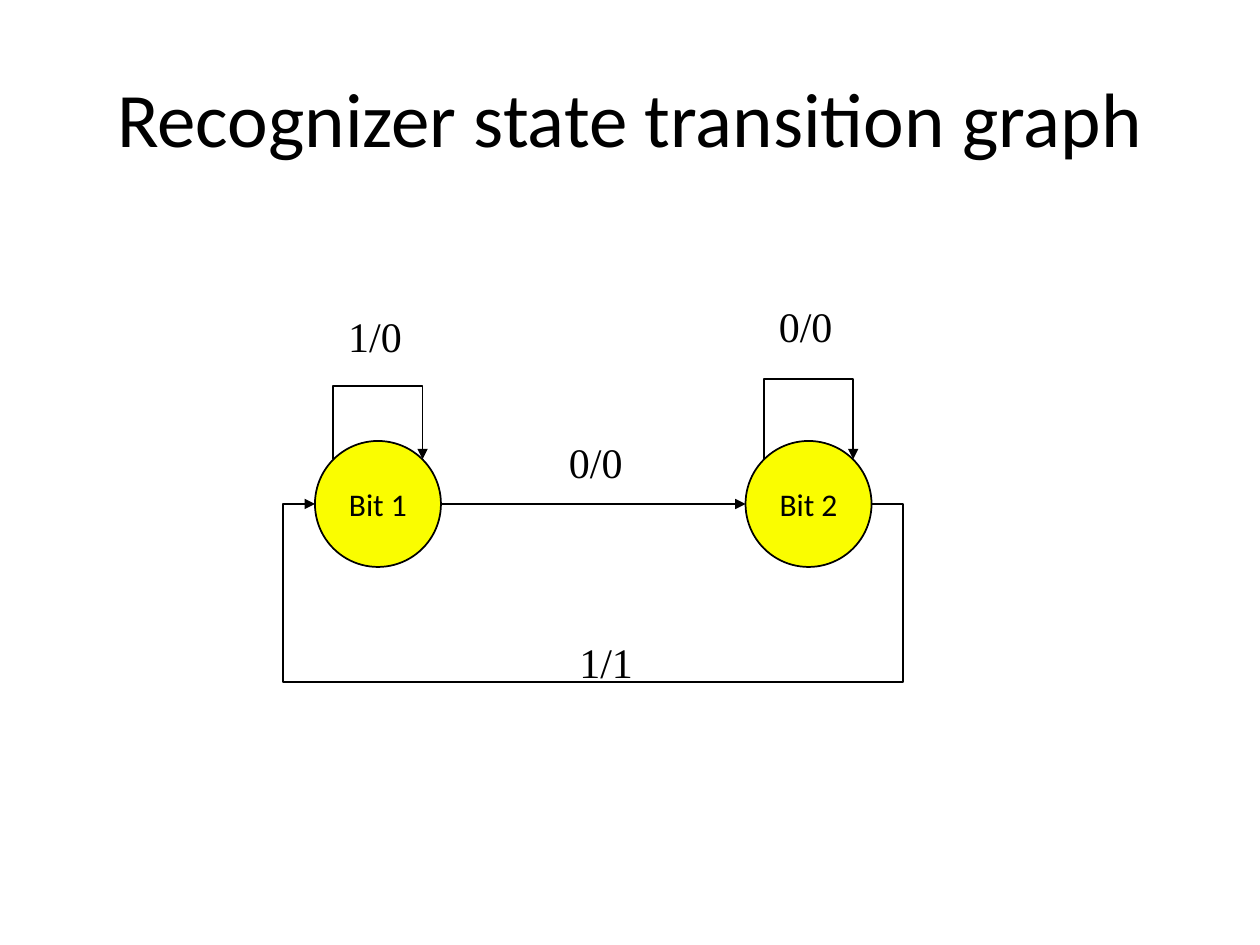
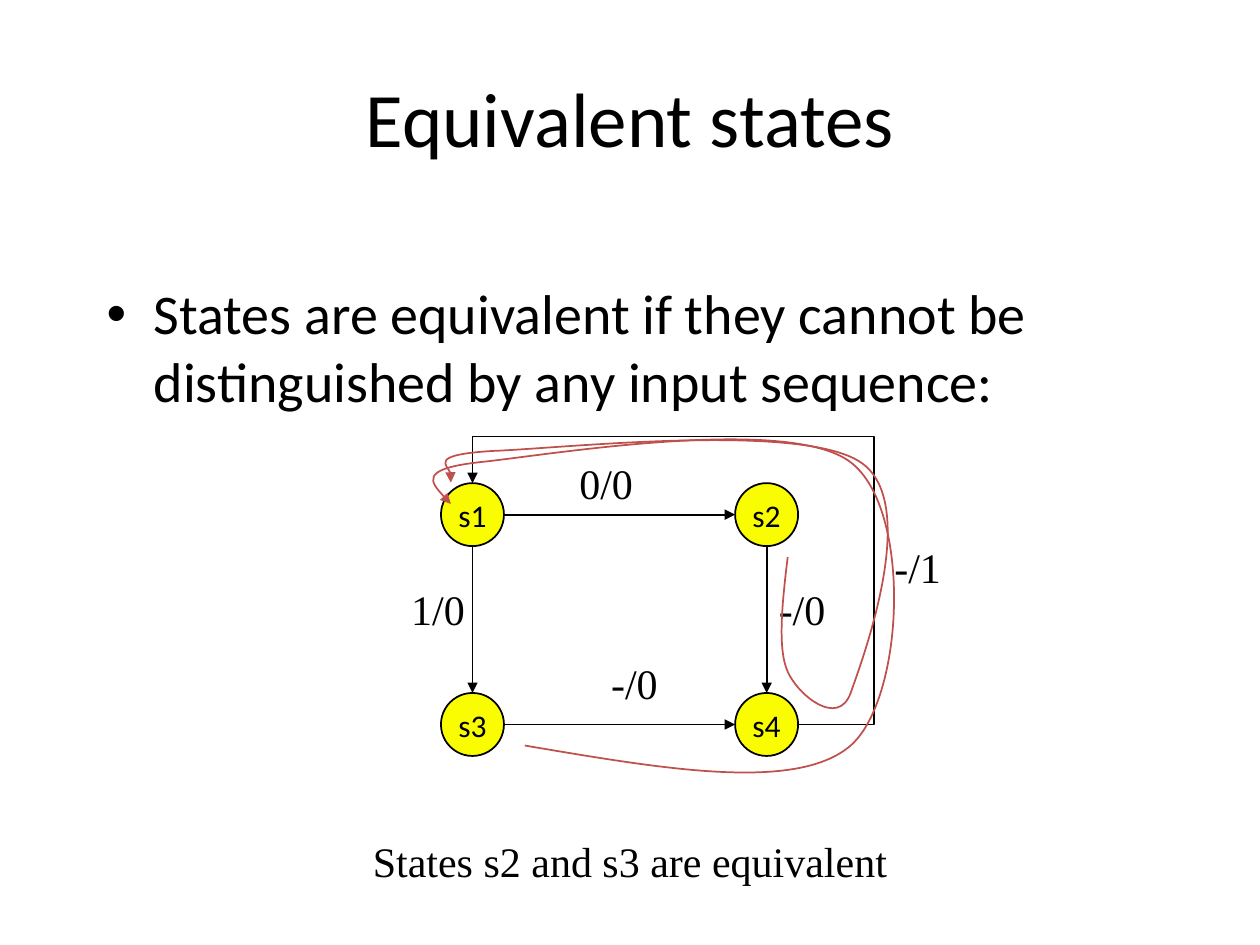
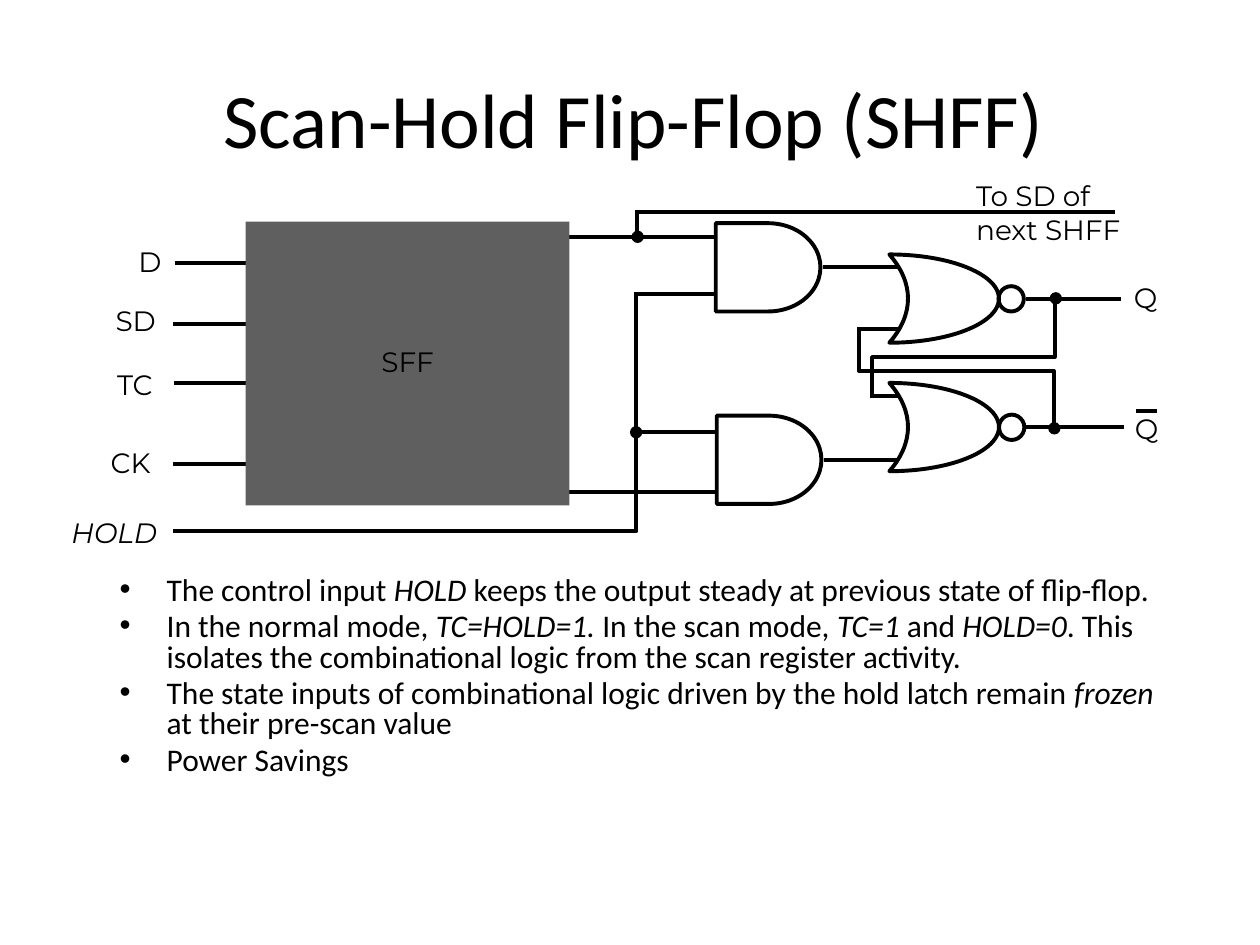
from itertools import product

from lxml.etree import SubElement
from pptx import Presentation
from pptx.dml.color import RGBColor
from pptx.enum.shapes import MSO_CONNECTOR, MSO_SHAPE as Preset
from pptx.enum.text import MSO_ANCHOR as Anchor, PP_ALIGN as Align
from pptx.oxml.ns import qn
from pptx.util import Cm, Pt

COLORS = {"ink": "000000", "state": "FAFD00", "block": "5F5F5F", "trace": "C0504D"}
HEADING_FONT = "Calibri"
LABEL_FONT = "Times New Roman"
CIRCUIT_FONT = "Montserrat"
THIN, WIRE = 1, 2.25
BULLET_INDENT = 0.95


def color(name):
    return RGBColor.from_string(COLORS[name])


# Text
def set_bullet(paragraph):
    properties = paragraph._p.get_or_add_pPr()
    properties.set("marL", str(Cm(BULLET_INDENT)))
    properties.set("indent", str(-Cm(BULLET_INDENT)))
    SubElement(properties, qn("a:buFont"), typeface="Arial")
    SubElement(properties, qn("a:buChar"), char="•")


def write_text(shape, text, font=HEADING_FONT, size=18, align=Align.LEFT,
               anchor=Anchor.TOP, wrap=False, italic=False, bullet=False,
               space_before=0, line_spacing=None):
    """Each line is a paragraph; words between asterisks are italic."""
    frame = shape.text_frame
    frame.word_wrap = wrap
    frame.vertical_anchor = anchor
    for index, line in enumerate(text.split("\n")):
        paragraph = frame.add_paragraph() if index else frame.paragraphs[0]
        paragraph.alignment = align
        paragraph.space_before = Pt(space_before)
        if line_spacing:
            paragraph.line_spacing = line_spacing
        if bullet:
            set_bullet(paragraph)
        for position, part in enumerate(line.split("*")):
            run = paragraph.add_run()
            run.text = part
            run.font.name = font
            run.font.size = Pt(size)
            run.font.italic = italic or position % 2 == 1
            run.font.color.rgb = color("ink")


def add_text(slide, text, left, top, width, height, **text_format):
    box = slide.shapes.add_textbox(Cm(left), Cm(top), Cm(width), Cm(height))
    write_text(box, text, **text_format)


def add_title(slide, text, left=1.27, top=0.76, width=22.86, height=3.18):
    add_text(slide, text, left, top, width, height, size=44, wrap=True,
             align=Align.CENTER, anchor=Anchor.MIDDLE)


def add_edge_label(slide, text, left, top):
    add_text(slide, text, left, top, 1.6, 1.27, font=LABEL_FONT, size=24)


def add_pin_label(slide, text, left, top, width, height=0.94, **text_format):
    add_text(slide, text, left, top, width, height,
             font=CIRCUIT_FONT, size=16, **text_format)


# Shapes
def add_shape(slide, preset, left, top, width, height, fill=None, line=None):
    shape = slide.shapes.add_shape(preset, Cm(left), Cm(top), Cm(width), Cm(height))
    shape.shadow.inherit = False
    if fill:
        shape.fill.solid()
        shape.fill.fore_color.rgb = color(fill)
    else:
        shape.fill.background()
    if line:
        shape.line.color.rgb = color("ink")
        shape.line.width = Pt(line)
    else:
        shape.line.fill.background()
    return shape


def add_state(slide, name, left, top, diameter):
    circle = add_shape(slide, Preset.OVAL, left, top, diameter, diameter, "state", THIN)
    write_text(circle, name, align=Align.CENTER, anchor=Anchor.MIDDLE)


def add_nor_gate(slide, top, bubble_left):
    body = add_shape(slide, Preset.MOON, 17.93, top, 2.21, 1.78, line=WIRE)
    body.adjustments[0] = 0.83
    body._element.spPr.xfrm.set("flipH", "1")
    add_shape(slide, Preset.OVAL, bubble_left, top + 0.64, 0.51, 0.51, line=WIRE)


# Lines
def style_line(shape, width, line_color="ink", arrow=False):
    shape.line.color.rgb = color(line_color)
    shape.line.width = Pt(width)
    if arrow:
        SubElement(shape.line._get_or_add_ln(), qn("a:tailEnd"), type="triangle")


def add_line(slide, start, end, width=WIRE, arrow=False):
    ends = [Cm(value) for value in (*start, *end)]
    connector = slide.shapes.add_connector(MSO_CONNECTOR.STRAIGHT, *ends)
    style_line(connector, width, arrow=arrow)
    SubElement(connector._element.spPr, qn("a:effectLst"))


def add_route(slide, points, width=WIRE, line_color="ink", arrow=False):
    start, *others = [(Cm(x), Cm(y)) for x, y in points]
    builder = slide.shapes.build_freeform(*start)
    builder.add_line_segments(others, close=False)
    route = builder.convert_to_shape()
    route.shadow.inherit = False
    route.fill.background()
    style_line(route, width, line_color, arrow)
    return route


def add_curve(slide, points):
    """Turn every three points after the first into one Bézier segment."""
    curve = add_route(slide, points, THIN, "trace", arrow=True)
    outline = next(curve._element.iter(qn("a:path")))
    segments = outline.findall(qn("a:lnTo"))
    for first in range(0, len(segments), 3):
        bezier = SubElement(outline, qn("a:cubicBezTo"))
        for segment in segments[first:first + 3]:
            bezier.append(segment[0])
            outline.remove(segment)


# Slides
def build_recognizer(slide):
    add_title(slide, "Recognizer state transition graph")
    diameter, top = 2.54, 8.89
    middle = top + diameter / 2
    first, second = 6.35, 15.03
    for name, left, peak in (("Bit 1", first, 7.78), ("Bit 2", second, 7.64)):
        add_state(slide, name, left, top, diameter)
        center, reach = left + diameter / 2, 0.9
        loop_left, loop_right, foot = center - reach, center + reach, middle - reach
        add_route(slide, [(loop_left, foot), (loop_left, peak),
                          (loop_right, peak), (loop_right, foot)], THIN, arrow=True)
    add_line(slide, (first + diameter, middle), (second, middle), THIN, arrow=True)
    add_route(slide, [(second + diameter, middle), (18.21, middle), (18.21, 13.75),
                      (5.71, 13.75), (5.71, middle), (first, middle)],
              THIN, arrow=True)
    for text, left, label_top in (("0/0", 11.22, 8.68), ("1/1", 11.43, 12.7),
                                  ("1/0", 6.77, 6.14), ("0/0", 15.45, 5.93)):
        add_edge_label(slide, text, left, label_top)


def build_equivalent_states(slide):
    add_title(slide, "Equivalent states")
    add_text(slide, "States are equivalent if they cannot be distinguished "
             "by any input sequence:", 1.9, 5.5, 21.59, 2.96,
             size=32, wrap=True, bullet=True, space_before=6.4)

    # State grid with its transitions
    diameter = 1.27
    radius = diameter / 2
    columns, rows = (8.89, 14.82), (9.74, 13.97)
    for number, (top, left) in enumerate(product(rows, columns), 1):
        add_state(slide, f"s{number}", left, top, diameter)
    for top in rows:
        add_line(slide, (columns[0] + diameter, top + radius),
                 (columns[1], top + radius), THIN, arrow=True)
    for left in columns:
        add_line(slide, (left + radius, rows[0] + diameter),
                 (left + radius, rows[1]), THIN, arrow=True)
    s1_center, s4_middle = columns[0] + radius, rows[1] + radius
    add_route(slide, [(columns[1] + diameter, s4_middle), (17.62, s4_middle),
                      (17.62, 8.8), (s1_center, 8.8), (s1_center, rows[0])],
              THIN, arrow=True)
    for text, left, top in (("0/0", 11.43, 9.1), ("-/0", 15.45, 11.64),
                            ("-/1", 17.78, 10.8), ("-/0", 12.07, 13.12),
                            ("1/0", 8.04, 11.64)):
        add_edge_label(slide, text, left, top)

    # Matching traces from s2 and s3
    add_curve(slide, [(15.88, 11.23), (15.77, 12.14), (15.67, 13.08), (15.88, 13.54),
                      (16.08, 14), (16.89, 14.68), (17.15, 13.97),
                      (17.4, 13.26), (18.57, 10.13), (17.35, 9.32),
                      (16.15, 8.51), (11.33, 9.04), (9.96, 9.09),
                      (8.59, 9.17), (9.25, 9.63), (9.09, 9.73)])
    add_curve(slide, [(10.58, 15.03), (13.31, 15.49), (16.05, 15.98), (17.15, 15.03),
                      (18.24, 14.07), (18.39, 10.26), (17.15, 9.32),
                      (15.9, 8.36), (11.07, 9.17), (9.74, 9.31),
                      (8.41, 9.45), (8.74, 9.8), (9.09, 10.16)])
    add_text(slide, "States s2 and s3 are equivalent", 2.75, 16.72, 19.9, 1.27,
             font=LABEL_FONT, size=24, wrap=True, align=Align.CENTER, space_before=12)


def build_scan_hold(slide):
    # Flip-flop block with its pins
    for left, y in ((3.53, 5.31), (3.48, 6.53), (3.51, 7.72), (3.48, 9.35)):
        add_line(slide, (left, y), (left + 1.6, y))
    for y in (9.91, 4.78):
        add_line(slide, (14.45, y), (11.43, y))
    add_shape(slide, Preset.RECTANGLE, 4.95, 4.47, 6.53, 5.72, "block")

    add_title(slide, "Scan-Hold Flip-Flop (SHFF)", 1.14, 0.84, 23.27, 3.07)
    add_text(slide, "The control input *HOLD* keeps the output steady at previous "
             "state of flip-flop.\n"
             "In the normal mode, *TC=HOLD=1. *In the scan mode, *TC=1* and *HOLD=0*. "
             "This isolates the combinational logic from the scan register activity.\n"
             "The state inputs of combinational logic driven by the hold latch remain"
             "* frozen *at their pre-scan value\n"
             "Power Savings", 2.16, 11.51, 21.59, 5.72,
             wrap=True, bullet=True, space_before=3.6, line_spacing=0.8)

    # Gates
    for left, top in ((14.43, 4.5), (14.45, 8.38)):
        add_shape(slide, Preset.FLOWCHART_DELAY, left, top, 2.11, 1.78, line=WIRE)
    add_nor_gate(slide, 7.72, 20.14)
    add_nor_gate(slide, 5.13, 20.13)

    # Cross-coupled feedback and hold line
    add_route(slide, [(20.68, 6.02), (21.26, 6.02), (21.26, 7.2),
                      (17.58, 7.2), (17.58, 8.03)])
    add_route(slide, [(17.32, 6.6), (17.32, 7.48), (21.25, 7.48),
                      (21.25, 8.61), (20.68, 8.61)])
    add_route(slide, [(12.83, 5.89), (12.83, 10.71), (3.48, 10.71)])

    # Straight wires: start x, end x, height
    for start, end, y in ((21.26, 22.6, 6.02), (21.23, 22.66, 8.61),
                          (18.14, 17.58, 7.98), (18.11, 17.32, 6.63),
                          (16.59, 18.11, 5.38), (16.61, 18.11, 9.27),
                          (12.88, 14.48, 8.71), (12.83, 14.45, 5.92),
                          (12.83, 22.48, 4.27)):
        add_line(slide, (start, y), (end, y))
    add_line(slide, (12.85, 4.78), (12.85, 4.24))
    for left, top in ((21.13, 8.51), (21.16, 5.89), (12.7, 8.59), (12.73, 4.65)):
        add_shape(slide, Preset.OVAL, left, top, 0.25, 0.25, "ink")

    # Signal names
    for text, left, top, width in (
            ("SFF", 7.44, 6.83, 1.68), ("D", 2.54, 4.8, 0.97),
            ("SD", 2.08, 5.99, 1.35), ("TC", 2.11, 7.29, 1.35),
            ("CK", 1.98, 8.86, 1.42), ("Q", 22.61, 5.54, 0.99),
            ("Q", 22.63, 8.18, 0.99)):
        add_pin_label(slide, text, left, top, width)
    add_pin_label(slide, "HOLD", 1.19, 10.26, 2.26, italic=True)
    add_pin_label(slide, "To SD of\nnext SHFF", 19.43, 3.48, 3.71, 1.63)
    add_line(slide, (22.91, 8.28), (23.32, 8.28))  # bar over the inverted output


def main():
    presentation = Presentation()
    presentation.slide_width = Cm(25.4)
    presentation.slide_height = Cm(19.05)
    blank = presentation.slide_layouts[6]
    for build in (build_recognizer, build_equivalent_states, build_scan_hold):
        build(presentation.slides.add_slide(blank))
    presentation.save("out.pptx")


if __name__ == "__main__":
    main()
